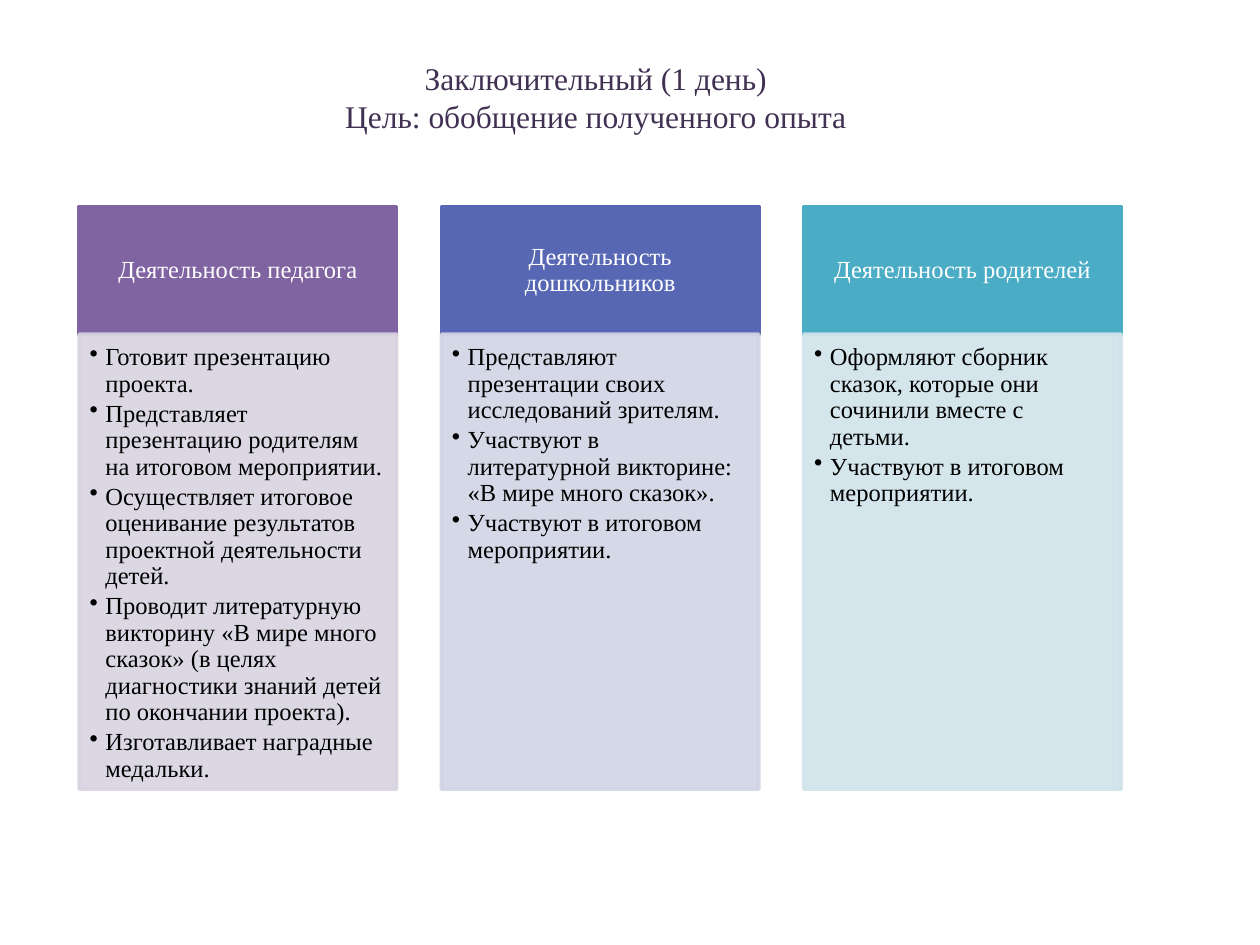
from dataclasses import dataclass
from typing import Any

import pptx
import pptx.dml.color
import pptx.enum.shapes
import pptx.enum.text
import pptx.oxml.ns
import pptx.util
from lxml import etree

Pt = pptx.util.Pt
ALIGN = pptx.enum.text.PP_ALIGN
ANCHOR = pptx.enum.text.MSO_ANCHOR


@dataclass(frozen=True)
class Theme:
    font: str = "Times New Roman"
    title_size: float = 18
    text_size: float = 14
    title_color: str = "403152"
    heading_color: str = "FFFFFF"
    body_color: str = "000000"
    border: float = 2
    body_opacity: int = 90


@dataclass(frozen=True)
class Column:
    heading: str
    color: str
    tint: str
    items: tuple[str, ...]


@dataclass(frozen=True)
class Area:
    left: float
    top: float
    width: float
    height: float

    def points(self) -> tuple:
        return Pt(self.left), Pt(self.top), Pt(self.width), Pt(self.height)


THEME = Theme()
TITLE = "Заключительный (1 день)\vЦель: обобщение полученного опыта"
COLUMNS = (
    Column("Деятельность педагога", "8064A2", "D8D3E0", (
        "Готовит презентацию проекта.",
        "Представляет презентацию родителям на итоговом мероприятии.",
        "Осуществляет итоговое оценивание результатов проектной деятельности детей.",
        "Проводит литературную викторину «В мире много сказок» "
        "(в целях диагностики знаний детей по окончании проекта).",
        "Изготавливает наградные медальки.",
    )),
    Column("Деятельность дошкольников", "5767B4", "D1D4E5", (
        "Представляют презентации своих исследований зрителям.",
        "Участвуют в литературной викторине: «В мире много сказок».",
        "Участвуют в итоговом мероприятии.",
    )),
    Column("Деятельность родителей", "4BACC6", "D0E3EA", (
        "Оформляют сборник сказок, которые они сочинили вместе с детьми.",
        "Участвуют в итоговом мероприятии.",
    )),
)

# Column grid
LEFT, TOP, WIDTH, PITCH = 45.2, 118, 181.5, 207
HEADING_HEIGHT, BODY_HEIGHT = 73, 260


def rgb(value: str) -> pptx.dml.color.RGBColor:
    return pptx.dml.color.RGBColor.from_string(value)


def apply(target: Any, formats: dict[str, Any]) -> None:
    for name, value in formats.items():
        setattr(target, name, value)


def set_frame(box: Any, anchor: Any, insets: tuple[float, ...]) -> None:
    left, top, right, bottom = map(Pt, insets)
    apply(box.text_frame, {
        "word_wrap": True, "vertical_anchor": anchor,
        "margin_left": left, "margin_top": top,
        "margin_right": right, "margin_bottom": bottom,
    })


def write(para: Any, text: str, size: float, color: str, formats: dict[str, Any]) -> None:
    para.text = text
    apply(para, formats)
    for span in para.runs:
        apply(span.font, {"name": THEME.font, "size": Pt(size)})
        span.font.color.rgb = rgb(color)


def add_bullet(para: Any) -> None:
    properties = para._p.get_or_add_pPr()
    properties.set("marL", str(Pt(9)))
    properties.set("indent", str(Pt(-9)))
    bullet = etree.SubElement(properties, pptx.oxml.ns.qn("a:buChar"))
    bullet.set("char", "•")


def add_panel(page: Any, area: Area, color: str, opacity: int = 100) -> Any:
    box = page.shapes.add_shape(
        pptx.enum.shapes.MSO_SHAPE.RECTANGLE, *area.points())
    box.shadow.inherit = False
    box.fill.solid()
    box.fill.fore_color.rgb = rgb(color)
    box.line.color.rgb = rgb(color)
    box.line.width = Pt(THEME.border)
    if opacity < 100:
        for paint in box._element.spPr.iter(pptx.oxml.ns.qn("a:srgbClr")):
            alpha = etree.SubElement(paint, pptx.oxml.ns.qn("a:alpha"))
            alpha.set("val", str(opacity * 1000))
    return box


def add_column(page: Any, column: Column, left: float) -> None:
    # Heading
    heading = add_panel(page, Area(left, TOP, WIDTH, HEADING_HEIGHT), column.color)
    set_frame(heading, ANCHOR.MIDDLE, (8, 4.5, 8, 4.5))
    write(heading.text_frame.paragraphs[0], column.heading, THEME.text_size,
          THEME.heading_color, {"alignment": ALIGN.CENTER, "line_spacing": 0.9})

    # Bulleted list
    area = Area(left, TOP + HEADING_HEIGHT, WIDTH, BODY_HEIGHT)
    body = add_panel(page, area, column.tint, THEME.body_opacity)
    set_frame(body, ANCHOR.TOP, (6, 6, 8, 9))
    frame = body.text_frame
    for index, item in enumerate(column.items):
        para = frame.add_paragraph() if index else frame.paragraphs[0]
        add_bullet(para)
        write(para, item, THEME.text_size, THEME.body_color, {
            "alignment": ALIGN.LEFT, "level": 1,
            "line_spacing": 0.9, "space_after": Pt(2),
        })


def main() -> None:
    deck = pptx.Presentation()
    apply(deck, {"slide_width": Pt(720), "slide_height": Pt(540)})
    page = deck.slides.add_slide(deck.slide_layouts[6])

    # Title
    title = page.shapes.add_textbox(*Area(34, 34, 613, 78).points())
    set_frame(title, ANCHOR.TOP, (0, 0, 0, 0))
    write(title.text_frame.paragraphs[0], TITLE, THEME.title_size,
          THEME.title_color, {"alignment": ALIGN.CENTER})

    # Activity columns
    for index, column in enumerate(COLUMNS):
        add_column(page, column, LEFT + index * PITCH)

    deck.save("out.pptx")


if __name__ == "__main__":
    main()
